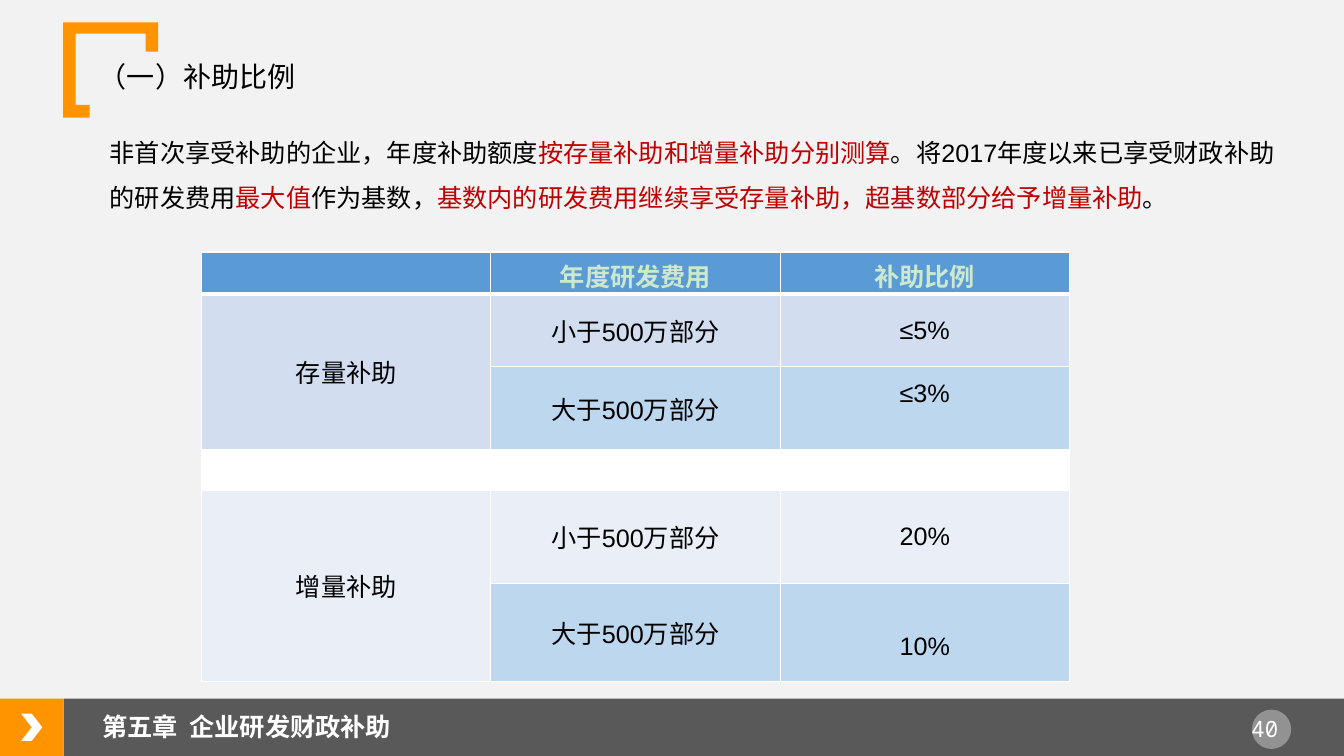
import pptx
import pptx.util
import pptx.dml.color
import pptx.enum.shapes
import pptx.enum.text
import pptx.oxml
import pptx.oxml.ns

Pt = pptx.util.Pt
RGB = pptx.dml.color.RGBColor
MSO = pptx.enum.shapes.MSO_SHAPE
ALIGN = pptx.enum.text.PP_ALIGN
ANCHOR = pptx.enum.text.MSO_ANCHOR

ORANGE = RGB(0xFF, 0x93, 0x00)
GRAY = RGB(0x59, 0x59, 0x59)
PAPER = RGB(0xF2, 0xF2, 0xF2)
WHITE = RGB(0xFF, 0xFF, 0xFF)
BLACK = RGB(0, 0, 0)
RED = RGB(0xC0, 0, 0)
MINT = RGB(0xCC, 0xE8, 0xCF)
HEAD = RGB(0x5B, 0x9B, 0xD5)
STOCK = RGB(0xD2, 0xDE, 0xEF)
GROWTH = RGB(0xEA, 0xEF, 0xF7)
UPPER = RGB(0xBD, 0xD7, 0xEE)

TITLE = " （一）补助比例"
CHAPTER = "第五章  企业研发财政补助"
PAGE = "40 "
INTRO = [
    ("非首次享受补助的企业，年度补助额度", BLACK),
    ("按存量补助和增量补助分别测算", RED),
    ("。将2017年度以来已享受财政补助的研发费用", BLACK),
    ("最大值", RED),
    ("作为基数，", BLACK),
    ("基数内的研发费用继续享受存量补助，超基数部分给予增量补助", RED),
    ("。", BLACK),
]
# Row height, fills by column, texts by column
ROWS = [
    (30, (HEAD, HEAD, HEAD), ("", "年度研发费用", "补助比例")),
    (52, (STOCK, STOCK, STOCK), ("存量补助", "小于500万部分", "≤5%")),
    (59, (STOCK, UPPER, UPPER), ("", "大于500万部分", "≤3%")),
    (29, (WHITE, WHITE, WHITE), ("", "", "")),
    (67, (GROWTH, GROWTH, GROWTH), ("增量补助", "小于500万部分", "20%")),
    (70, (GROWTH, UPPER, UPPER), ("", "大于500万部分", "10%")),
]
MERGES = [((1, 0), (2, 0)), ((3, 0), (3, 2)), ((4, 0), (5, 0))]
COL_WIDTH = 206.64
BRACKET = [(45.4, 15.8), (113.2, 15.8), (113.2, 36.7), (104.4, 36.7), (104.4, 24.5),
           (54, 24.5), (54, 74.9), (64.5, 74.9), (64.5, 84), (45.4, 84)]


def paint(sp, color):
    sp.shadow.inherit = False
    sp.fill.solid()
    sp.fill.fore_color.rgb = color
    sp.line.fill.background()


def add_block(slide, kind, color, *box):
    sp = slide.shapes.add_shape(kind, *map(Pt, box))
    paint(sp, color)
    return sp


def add_run(p, text, size, color, font="Arial", bold=False):
    r = p.add_run()
    r.text = text
    r.font.size = Pt(size)
    r.font.name = font
    r.font.bold = bold
    r.font.color.rgb = color


def add_text(slide, *box):
    """Add a wrapping text box and return its first paragraph."""
    tf = slide.shapes.add_textbox(*map(Pt, box)).text_frame
    tf.word_wrap = True
    return tf.paragraphs[0]


def set_borders(cell, bottom):
    tc_pr = cell._tc.get_or_add_tcPr()
    for side, width in (("L", 1), ("R", 1), ("T", 1), ("B", bottom)):
        tc_pr.append(pptx.oxml.parse_xml(
            f'<a:ln{side} {pptx.oxml.ns.nsdecls("a")} w="{Pt(width)}">'
            f'<a:solidFill><a:srgbClr val="{WHITE}"/></a:solidFill></a:ln{side}>'))


def add_frame(slide):
    """Draw the footer bar, page badge and corner bracket."""
    add_block(slide, MSO.RECTANGLE, ORANGE, 0, 499, 45.4, 41)
    add_block(slide, MSO.RECTANGLE, GRAY, 45.4, 499, 914.6, 41)
    add_block(slide, MSO.CHEVRON, WHITE, 15.1, 509.8, 15.1, 19.4)
    badge = add_block(slide, MSO.OVAL, WHITE, 894.2, 506.9, 28.1, 28.1)
    color = badge._element.spPr.find(".//" + pptx.oxml.ns.qn("a:srgbClr"))
    color.append(pptx.oxml.parse_xml(
        f'<a:alpha {pptx.oxml.ns.nsdecls("a")} val="35000"/>'))
    p = add_text(slide, 882.7, 507.6, 51.1, 26.6)
    p.alignment = ALIGN.CENTER
    add_run(p, PAGE, 16, WHITE, "Noto Sans Mono")
    outline = slide.shapes.build_freeform(*BRACKET[0], scale=Pt(1))
    outline.add_line_segments(BRACKET[1:], close=True)
    paint(outline.convert_to_shape(), ORANGE)


def add_rates(slide):
    """Draw the table of subsidy rates."""
    height = sum(row[0] for row in ROWS)
    table = slide.shapes.add_table(len(ROWS), 3, Pt(144), Pt(180),
                                   Pt(3 * COL_WIDTH), Pt(height)).table
    for col in table.columns:
        col.width = Pt(COL_WIDTH)
    for i, (row_height, fills, texts) in enumerate(ROWS):
        table.rows[i].height = Pt(row_height)
        for j, (fill, text) in enumerate(zip(fills, texts)):
            cell = table.cell(i, j)
            set_borders(cell, 3 if i == 0 else 1)
            cell.fill.solid()
            cell.fill.fore_color.rgb = fill
            cell.vertical_anchor = ANCHOR.MIDDLE
            p = cell.text_frame.paragraphs[0]
            p.alignment = ALIGN.CENTER
            if text:
                add_run(p, text, 18, MINT if i == 0 else BLACK, bold=i == 0)
    table.cell(2, 2).margin_bottom = Pt(24)
    table.cell(5, 2).margin_top = Pt(24)
    for first, last in MERGES:
        table.cell(*first).merge(table.cell(*last))


def main():
    prs = pptx.Presentation()
    prs.slide_width, prs.slide_height = Pt(960), Pt(540)
    slide = prs.slides.add_slide(prs.slide_layouts[5])
    slide.background.fill.solid()
    slide.background.fill.fore_color.rgb = PAPER
    add_frame(slide)

    title = slide.shapes.title
    title.left, title.top, title.width, title.height = map(Pt, (59, 41.8, 828, 41.8))
    title.text_frame.vertical_anchor = ANCHOR.TOP
    p = title.text_frame.paragraphs[0]
    p.alignment = ALIGN.LEFT
    p.line_spacing = 0.9
    add_run(p, TITLE, 20, BLACK, "Noto Sans CJK SC")

    p = add_text(slide, 71.3, 83.5, 856.8, 72.7)
    p.line_spacing = 1.5
    for text, color in INTRO:
        add_run(p, text, 18, color)

    add_rates(slide)
    add_run(add_text(slide, 66.2, 504.7, 249.1, 28.8), CHAPTER, 18, WHITE, bold=True)
    prs.save("out.pptx")


if __name__ == "__main__":
    main()
